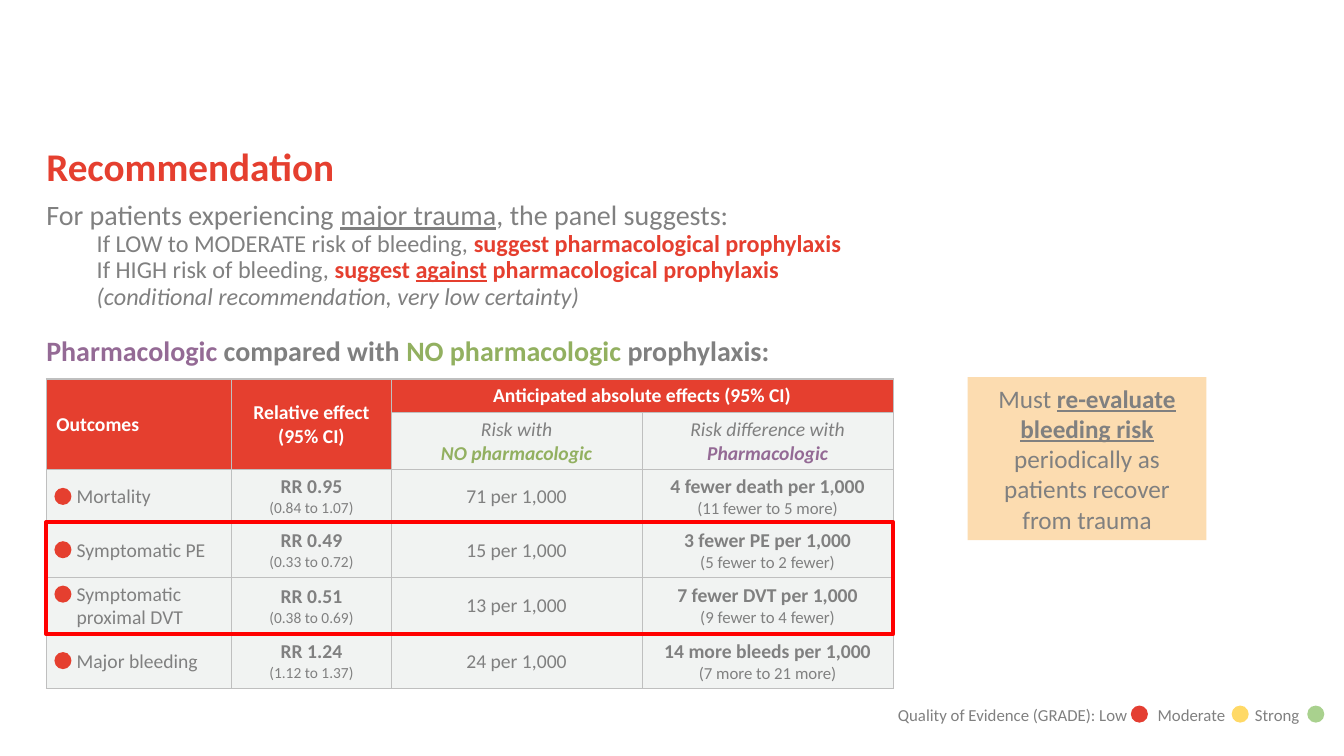
from dataclasses import dataclass

from lxml import etree
from pptx import Presentation
from pptx.dml.color import RGBColor
from pptx.enum import shapes, text
from pptx.oxml.ns import qn
from pptx.util import Pt


@dataclass(frozen=True)
class Theme:
    font: str = "Calibri"
    grey: str = "808080"
    red: str = "E53F2F"
    purple: str = "946A95"
    green: str = "92B060"
    white: str = "FFFFFF"
    cell: str = "F1F3F2"
    border: str = "BFBFBF"
    highlight: str = "FF0000"
    peach: str = "FCDCB0"
    low: str = "E43E32"
    moderate: str = "FFD966"
    strong: str = "A9D18E"
    title: float = 28
    lead: float = 20
    callout: float = 18
    detail: float = 17.3
    table: float = 14
    small: float = 12
    tiny: float = 11


THEME = Theme()
CENTER = text.PP_ALIGN.CENTER
RED_BOLD = dict(color=THEME.red, bold=True)
UNDERLINED = dict(underline=True)
BOLD = dict(bold=True)

# A paragraph is a list of (words, format) runs.
TITLE = [("Recommendation", RED_BOLD)]
LEAD = [("For patients experiencing ", {}), ("major trauma", UNDERLINED),
        (", the panel suggests:", {})]
SUGGESTIONS = [
    [("If LOW to MODERATE risk of bleeding, ", {}),
     ("suggest pharmacological prophylaxis", RED_BOLD)],
    [("If HIGH risk of bleeding, ", {}), ("suggest ", RED_BOLD),
     ("against", RED_BOLD | UNDERLINED), (" pharmacological prophylaxis", RED_BOLD)],
    [("(conditional recommendation, very low certainty)", dict(italic=True))],
]
COMPARISON = [("Pharmacologic ", dict(color=THEME.purple)), ("compared with ", {}),
              ("NO pharmacologic ", dict(color=THEME.green)), ("prophylaxis:", {})]
CALLOUT = [("Must ", {}), ("re-evaluate bleeding risk ", BOLD | UNDERLINED),
           ("periodically as patients recover from trauma", {})]
LEGEND = "Quality of Evidence (GRADE): Low\tModerate\tStrong"

HEADERS = ["Outcomes", "Relative effect (95% CI)", "Anticipated absolute effects (95% CI)"]
SUBHEADERS = [("Risk with", "NO pharmacologic", THEME.green),
              ("Risk difference with", "Pharmacologic", THEME.purple)]
OUTCOMES = [
    ("Mortality", ("RR 0.95", "(0.84 to 1.07)"), "71 per 1,000",
     ("4 fewer death per 1,000", "(11 fewer to 5 more)")),
    ("Symptomatic PE", ("RR 0.49", "(0.33 to 0.72)"), "15 per 1,000",
     ("3 fewer PE per 1,000", "(5 fewer to 2 fewer)")),
    ("Symptomatic proximal DVT", ("RR 0.51", "(0.38 to 0.69)"), "13 per 1,000",
     ("7 fewer DVT per 1,000", "(9 fewer to 4 fewer)")),
    ("Major bleeding", ("RR 1.24", "(1.12 to 1.37)"), "24 per 1,000",
     ("14 more bleeds per 1,000", "(7 more to 21 more)")),
]

LEFT = 33.1
TABLE_TOP = 270.7
COLUMNS = [132.5, 113.8, 179.3, 179.3]
ROWS = [23, 38.9, 36.7, 36.7, 38.9, 36.7]
DOT = 12.2
ROW_DOT_TOPS = [348.5, 386.6, 418.3, 465.8]
LEGEND_DOTS = [(807.8, THEME.low), (879.8, THEME.moderate), (933.8, THEME.strong)]
LEGEND_TABS = [185.5, 255]


def write(frame, runs, size, color=THEME.grey, bold=False, italic=False, align=None,
          spacing=None, before=None, indent=0, tabs=()):
    """Fill the frame's empty first paragraph, or add another, with a string or runs."""
    paragraph = frame.paragraphs[0]
    if paragraph.runs:
        paragraph = frame.add_paragraph()
    paragraph.alignment = align
    if spacing:
        paragraph.line_spacing = spacing
    if before:
        paragraph.space_before = Pt(before)
    properties = paragraph._p.get_or_add_pPr()
    if indent:
        properties.set("marL", str(Pt(indent)))
    if tabs:
        tab_list = etree.SubElement(properties, qn("a:tabLst"))
        for stop in tabs:
            etree.SubElement(tab_list, qn("a:tab"), pos=str(Pt(stop)), algn="l")
    for words, style in [(runs, {})] if isinstance(runs, str) else runs:
        run = paragraph.add_run()
        run.text = words
        font = run.font
        font.name, font.size = THEME.font, Pt(size)
        font.bold = style.get("bold", bold)
        font.italic = style.get("italic", italic)
        font.underline = style.get("underline", False)
        font.color.rgb = RGBColor.from_string(style.get("color", color))


def add_frame(slide, left, top, width, height, margin=None):
    frame = slide.shapes.add_textbox(Pt(left), Pt(top), Pt(width), Pt(height)).text_frame
    frame.word_wrap = True
    if margin is not None:
        frame.margin_left = frame.margin_right = Pt(margin)
        frame.margin_top = frame.margin_bottom = Pt(margin)
    return frame


def add_shape(slide, kind, left, top, width, height, fill=None, line=None):
    shape = slide.shapes.add_shape(kind, Pt(left), Pt(top), Pt(width), Pt(height))
    shape.shadow.inherit = False
    if fill:
        shape.fill.solid()
        shape.fill.fore_color.rgb = RGBColor.from_string(fill)
    else:
        shape.fill.background()
    if line:
        shape.line.color.rgb = RGBColor.from_string(line)
        shape.line.width = Pt(3)
    else:
        shape.line.fill.background()
    return shape


def style_cell(cell, fill):
    properties = cell._tc.get_or_add_tcPr()
    for side in ("lnL", "lnR", "lnT", "lnB"):
        line = etree.SubElement(properties, qn("a:" + side), w=str(Pt(1)))
        solid = etree.SubElement(line, qn("a:solidFill"))
        etree.SubElement(solid, qn("a:srgbClr"), val=THEME.border)
    cell.fill.solid()
    cell.fill.fore_color.rgb = RGBColor.from_string(fill)
    cell.vertical_anchor = text.MSO_ANCHOR.MIDDLE


def add_outcome_table(slide):
    table = slide.shapes.add_table(len(ROWS), len(COLUMNS), Pt(LEFT), Pt(TABLE_TOP),
                                   Pt(sum(COLUMNS)), Pt(sum(ROWS))).table
    table.first_row = table.horz_banding = False
    for column, width in zip(table.columns, COLUMNS):
        column.width = Pt(width)
    for row, height in zip(table.rows, ROWS):
        row.height = Pt(height)
    for r in range(len(ROWS)):
        for c in range(len(COLUMNS)):
            header = r == 0 or (r == 1 and c < 2)
            style_cell(table.cell(r, c), THEME.red if header else THEME.cell)
    for start, end in [((0, 0), (1, 0)), ((0, 1), (1, 1)), ((0, 2), (0, 3))]:
        table.cell(*start).merge(table.cell(*end))

    for c, header in enumerate(HEADERS):
        write(table.cell(0, c).text_frame, header, THEME.table, THEME.white, bold=True,
              align=CENTER if c else None)
    for c, (label, group, color) in enumerate(SUBHEADERS, start=2):
        frame = table.cell(1, c).text_frame
        write(frame, label, THEME.table, italic=True, align=CENTER)
        write(frame, group, THEME.table, color, bold=True, italic=True, align=CENTER)
    for r, (outcome, relative, risk, difference) in enumerate(OUTCOMES, start=2):
        table.cell(r, 0).margin_left = Pt(21.6)
        write(table.cell(r, 0).text_frame, outcome, THEME.table)
        write(table.cell(r, 2).text_frame, risk, THEME.table, align=CENTER)
        for c, pair, size in [(1, relative, THEME.tiny), (3, difference, THEME.small)]:
            frame = table.cell(r, c).text_frame
            write(frame, pair[0], THEME.table, bold=True, align=CENTER)
            write(frame, pair[1], size, align=CENTER)


def main():
    presentation = Presentation()
    presentation.slide_width, presentation.slide_height = Pt(960), Pt(540)
    slide = presentation.slides.add_slide(presentation.slide_layouts[6])
    rectangle, oval = shapes.MSO_SHAPE.RECTANGLE, shapes.MSO_SHAPE.OVAL

    body = add_frame(slide, LEFT, 144, 864, 42.5, margin=0)
    write(body, LEAD, THEME.lead, spacing=0.9)
    for suggestion in SUGGESTIONS:
        write(body, suggestion, THEME.detail, spacing=0.9, indent=36)
    write(body, COMPARISON, THEME.lead, bold=True, spacing=0.9, before=19)

    add_outcome_table(slide)
    add_shape(slide, rectangle, LEFT, 373, sum(COLUMNS), 79.9, line=THEME.highlight)
    callout = add_shape(slide, rectangle, 691.2, 269.3, 170.6, 116.6, fill=THEME.peach)
    callout.text_frame.word_wrap = True
    write(callout.text_frame, CALLOUT, THEME.callout, align=CENTER)

    title = add_frame(slide, LEFT, 105.8, 864, 38.2, margin=0)
    title.vertical_anchor = text.MSO_ANCHOR.TOP
    write(title, TITLE, THEME.title, spacing=0.9)

    legend = add_frame(slide, 634.3, 499.7, 325.7, 21.6)
    write(legend, LEGEND, THEME.small, tabs=LEGEND_TABS)
    dots = [(38.9, top, THEME.red) for top in ROW_DOT_TOPS]
    dots += [(left, 504, color) for left, color in LEGEND_DOTS]
    for left, top, color in dots:
        add_shape(slide, oval, left, top, DOT, DOT, fill=color)

    presentation.save("out.pptx")


if __name__ == "__main__":
    main()
